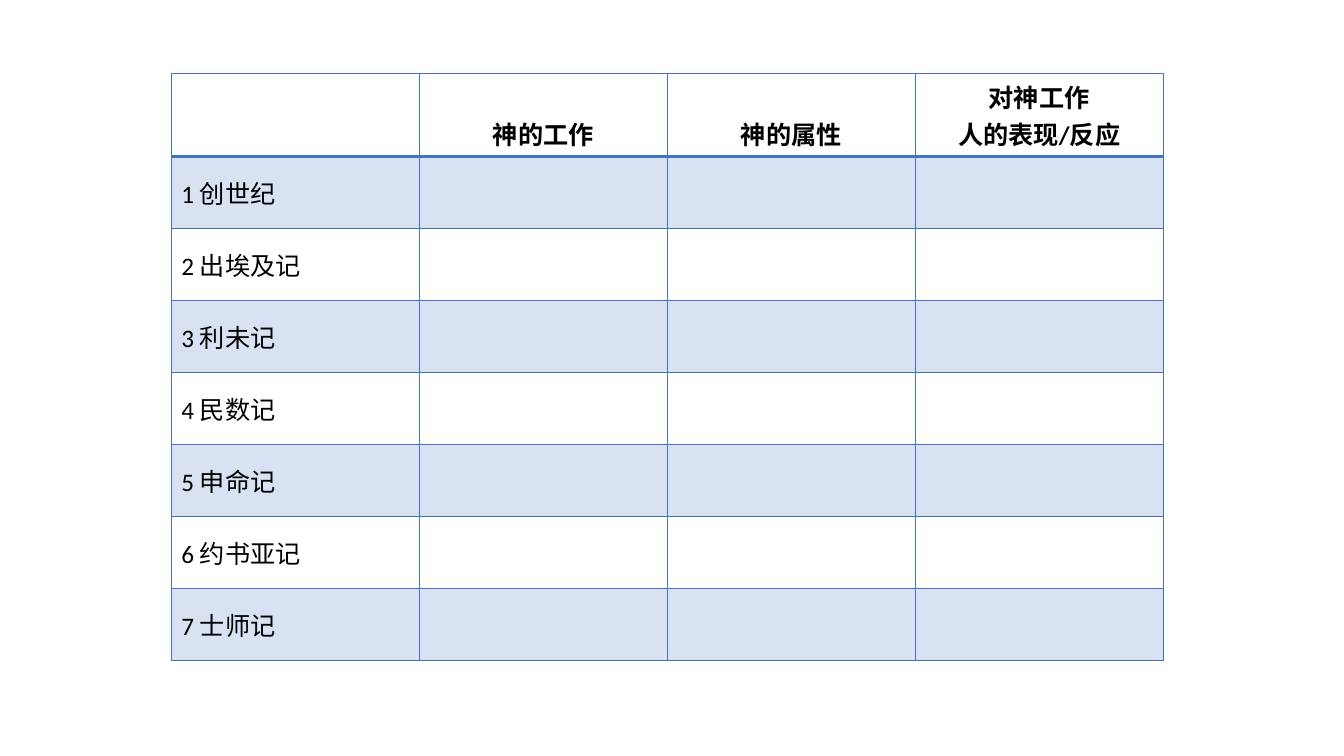
from lxml.etree import SubElement
from pptx import Presentation
from pptx.dml.color import RGBColor
from pptx.enum.text import MSO_ANCHOR, PP_ALIGN
from pptx.oxml.ns import qn
from pptx.util import Pt

HEADERS = ["", "神的工作", "神的属性", "对神工作\n人的表现/反应"]
BOOKS = ["创世纪", "出埃及记", "利未记", "民数记", "申命记", "约书亚记", "士师记"]

BLUE = RGBColor(0x44, 0x72, 0xC4)
BLACK = RGBColor(0, 0, 0)
BAND_OPACITY = 20

SLIDE_WIDTH, SLIDE_HEIGHT = 960, 540
TABLE_LEFT, TABLE_TOP = 122.4, 52.56
COLUMN_WIDTH = 177.12
HEADER_HEIGHT, BOOK_HEIGHT = 50.4, 51.43

FONT = {"name": "Calibri", "size": Pt(18)}
HEADER_FORMAT = {"anchor": MSO_ANCHOR.BOTTOM, "align": PP_ALIGN.CENTER, "bold": True}
BOOK_FORMAT = {"anchor": MSO_ANCHOR.MIDDLE, "align": PP_ALIGN.LEFT, "bold": False}


def write_text(cell, text, cell_format):
    cell.vertical_anchor = cell_format["anchor"]
    cell.text = text
    for paragraph in cell.text_frame.paragraphs:
        paragraph.alignment = cell_format["align"]
        for run in paragraph.runs:
            for name, value in {**FONT, "bold": cell_format["bold"]}.items():
                setattr(run.font, name, value)
            run.font.color.rgb = BLACK


def draw_borders(cell, bottom_width, top_width):
    properties = cell._tc.get_or_add_tcPr()
    widths = {"a:lnL": 1, "a:lnR": 1, "a:lnT": top_width, "a:lnB": bottom_width}
    for tag, width in widths.items():
        line = SubElement(properties, qn(tag), w=str(Pt(width)))
        fill = SubElement(line, qn("a:solidFill"))
        SubElement(fill, qn("a:srgbClr"), val=str(BLUE))


def fill_cell(cell, banded):
    if not banded:
        cell.fill.background()
        return
    cell.fill.solid()
    cell.fill.fore_color.rgb = BLUE
    color = cell._tc.tcPr.find(qn("a:solidFill")).find(qn("a:srgbClr"))
    SubElement(color, qn("a:alpha"), val=str(BAND_OPACITY * 1000))


def add_book_table(slide):
    blanks = [""] * (len(HEADERS) - 1)
    rows = [HEADERS] + [[f"{number} {book}"] + blanks for number, book in enumerate(BOOKS, 1)]
    heights = [HEADER_HEIGHT] + [BOOK_HEIGHT] * len(BOOKS)
    table = slide.shapes.add_table(
        len(rows), len(HEADERS), Pt(TABLE_LEFT), Pt(TABLE_TOP),
        Pt(COLUMN_WIDTH * len(HEADERS)), Pt(sum(heights))).table
    table.first_row = table.horz_banding = False
    for column in table.columns:
        column.width = Pt(COLUMN_WIDTH)
    for row_index, (texts, height) in enumerate(zip(rows, heights)):
        table.rows[row_index].height = Pt(height)
        for column_index, text in enumerate(texts):
            cell = table.cell(row_index, column_index)
            write_text(cell, text, BOOK_FORMAT if row_index else HEADER_FORMAT)
            draw_borders(cell, bottom_width=1 if row_index else 2,
                         top_width=2 if row_index == 1 else 1)
            fill_cell(cell, banded=row_index % 2 == 1)


def main():
    presentation = Presentation()
    presentation.slide_width = Pt(SLIDE_WIDTH)
    presentation.slide_height = Pt(SLIDE_HEIGHT)
    slide = presentation.slides.add_slide(presentation.slide_layouts[6])
    add_book_table(slide)
    presentation.save("out.pptx")


if __name__ == "__main__":
    main()
